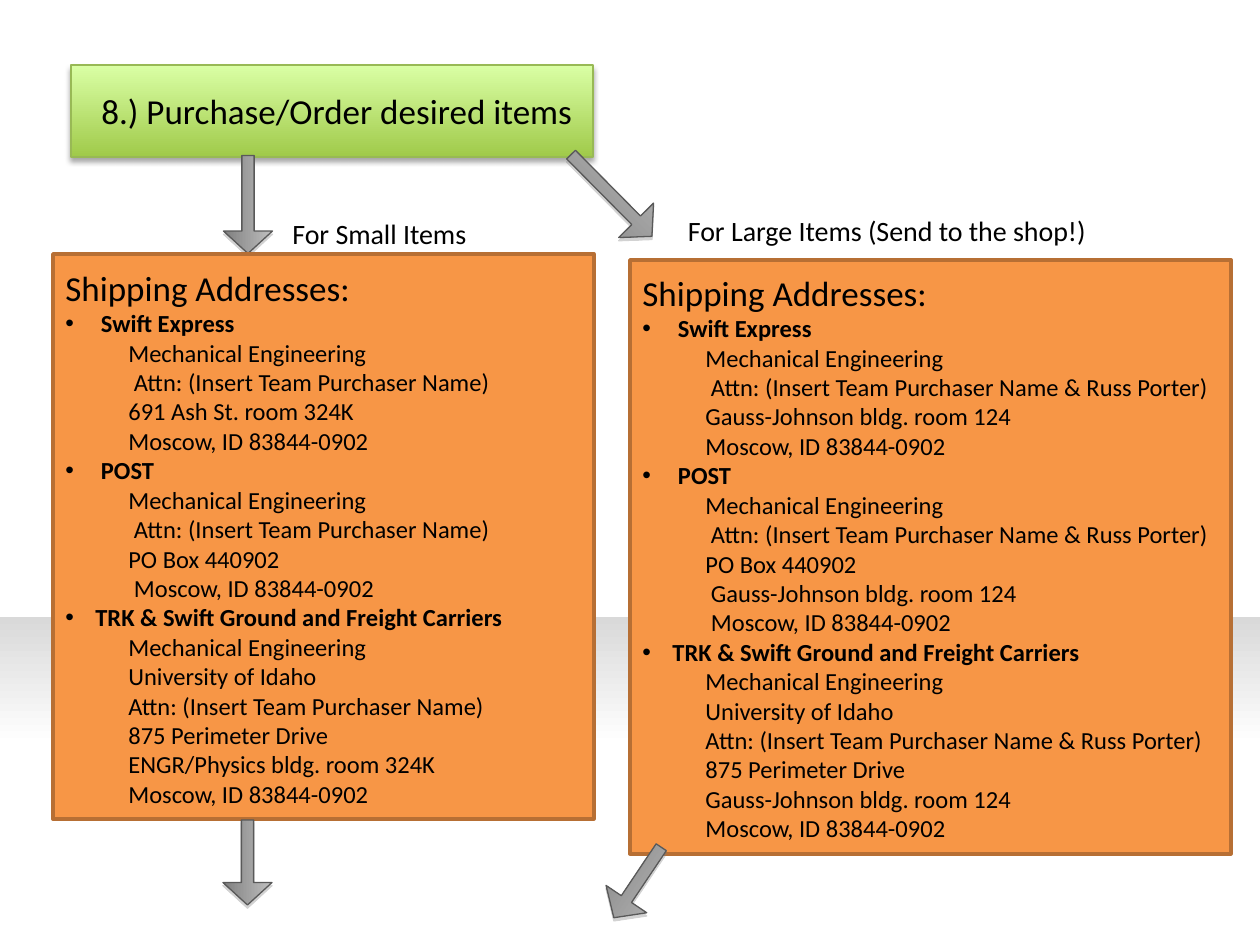
"""Build the flow slide for ordering items and their shipping addresses."""
import pptx
import pptx.dml.color
import pptx.enum.shapes
import pptx.enum.text
import pptx.oxml
import pptx.oxml.ns
import pptx.util

SCALE = 914400 / 126
COLORS = {
    "text": "000000", "white": "FFFFFF", "band": "D9D9D9",
    "orange": "F79646", "rust": "B76F34",
    "green": "A0CA4A", "lime": "DAFFA5", "moss": "98B955",
    "silver": "BFBFBF", "gray": "7F7F7F", "slate": "595959", "shade": "808080",
}
KINDS = pptx.enum.shapes.MSO_SHAPE
ALIGN = pptx.enum.text.PP_ALIGN
TOWN = "Moscow, ID 83844-0902"
DEPT = "Mechanical Engineering"


def emu(px):
    return pptx.util.Emu(round(px * SCALE))


def rgb(name):
    return pptx.dml.color.RGBColor.from_string(COLORS[name])


def add_shape(slide, kind, box, fill, line=None, width=0.75):
    shape = slide.shapes.add_shape(kind, *map(emu, box))
    shape.shadow.inherit = False
    shape.fill.solid()
    shape.fill.fore_color.rgb = rgb(fill)
    if line:
        shape.line.color.rgb = rgb(line)
        shape.line.width = pptx.util.Pt(width)
    else:
        shape.line.fill.background()
    return shape


def blend(shape, first, last, angle, end=1):
    shape.fill.gradient()
    shape.fill.gradient_angle = angle
    for stop, name, place in zip(shape.fill.gradient_stops, (first, last), (0, end)):
        stop.color.rgb = rgb(name)
        stop.position = place


def add_shadow(shape, color, blur):
    effects = shape._element.spPr.find(pptx.oxml.ns.qn("a:effectLst"))
    effects.append(pptx.oxml.parse_xml(
        f'<a:outerShdw {pptx.oxml.ns.nsdecls("a")} blurRad="{pptx.util.Pt(blur)}" '
        f'dist="{pptx.util.Pt(1.8)}" dir="5400000" rotWithShape="0">'
        f'<a:srgbClr val="{COLORS[color]}"><a:alpha val="35000"/></a:srgbClr>'
        '</a:outerShdw>'))


def add_arrow(slide, box, turn):
    arrow = add_shape(slide, KINDS.RIGHT_ARROW, box, "gray", "slate")
    arrow.rotation = turn
    arrow.adjustments[0] = 0.25
    arrow.adjustments[1] = 0.458
    blend(arrow, "silver", "gray", 270)
    add_shadow(arrow, "shade", 0)


def style(para, size, bold=False):
    for run in para.runs:
        run.font.size = pptx.util.Pt(size)
        run.font.name = "Calibri"
        run.font.bold = bold
        run.font.color.rgb = rgb("text")


def add_text(slide, box, text, size, align=ALIGN.LEFT):
    frame = slide.shapes.add_textbox(*map(emu, box)).text_frame
    frame.word_wrap = True
    frame.text = text
    frame.paragraphs[0].alignment = align
    style(frame.paragraphs[0], size)
    return frame


def indent(para, left, bullet=False):
    props = para._p.get_or_add_pPr()
    props.set("marL", str(emu(left)))
    props.set("indent", str(emu(-left if bullet else 0)))
    if bullet:
        space = pptx.oxml.ns.nsdecls("a")
        props.append(pptx.oxml.parse_xml(f'<a:buFont {space} typeface="Arial"/>'))
        props.append(pptx.oxml.parse_xml(f'<a:buChar {space} char="•"/>'))


def add_list(slide, box, groups):
    frame = add_text(slide, box, "Shipping Addresses:", 20)
    for title, lines in groups:
        for text in (title, *lines):
            para = frame.add_paragraph()
            para.text = text
            head = text == title
            indent(para, 30 if head else 63, head)
            style(para, 14, head)


def make_groups(buyer, street, box_lines, room):
    attn = f"Attn: (Insert Team {buyer})"
    return [
        (" Swift Express", [DEPT, " " + attn, street, TOWN]),
        (" POST", [DEPT, " " + attn, "PO Box 440902", *box_lines, " " + TOWN]),
        ("TRK & Swift Ground and Freight Carriers",
         [DEPT, "University of Idaho", attn, "875 Perimeter Drive", room, TOWN]),
    ]


def main():
    deck = pptx.Presentation()
    deck.slide_width, deck.slide_height = emu(1260), emu(945)
    slide = deck.slides.add_slide(deck.slide_layouts[6])
    shop = "Gauss-Johnson bldg. room 124"

    floor = add_shape(slide, KINDS.RECTANGLE, (0, 617, 1260, 328), "white")
    blend(floor, "band", "white", 270, 0.39)
    add_shape(slide, KINDS.RECTANGLE, (630, 260, 601, 594), "orange", "rust", 2)
    title = add_shape(slide, KINDS.RECTANGLE, (71, 65, 522, 92), "green", "moss")
    blend(title, "green", "lime", 90)
    add_shadow(title, "text", 3.1)
    add_text(slide, (89, 83, 585, 55), "8.) Purchase/Order desired items", 20)

    add_arrow(slide, (554, 171, 115, 49), 45.3)
    add_arrow(slide, (199, 180, 98, 49), 90)
    add_text(slide, (272, 210, 215, 47), "For Small Items", 16, ALIGN.CENTER)
    add_text(slide, (648, 207, 478, 47), "For Large Items (Send to the shop!)",
             16, ALIGN.CENTER)

    add_shape(slide, KINDS.RECTANGLE, (53, 254, 541, 565), "orange", "rust", 2)
    add_list(slide, (53, 260, 481, 559), make_groups(
        "Purchaser Name", "691 Ash St. room 324K", [],
        "ENGR/Physics bldg. room 324K"))
    add_arrow(slide, (205, 838, 85, 49), 90)
    add_list(slide, (630, 265, 601, 589), make_groups(
        "Purchaser Name & Russ Porter", shop, [" " + shop], shop))
    add_arrow(slide, (595, 858, 85, 49), 123.9)
    deck.save("out.pptx")


if __name__ == "__main__":
    main()
